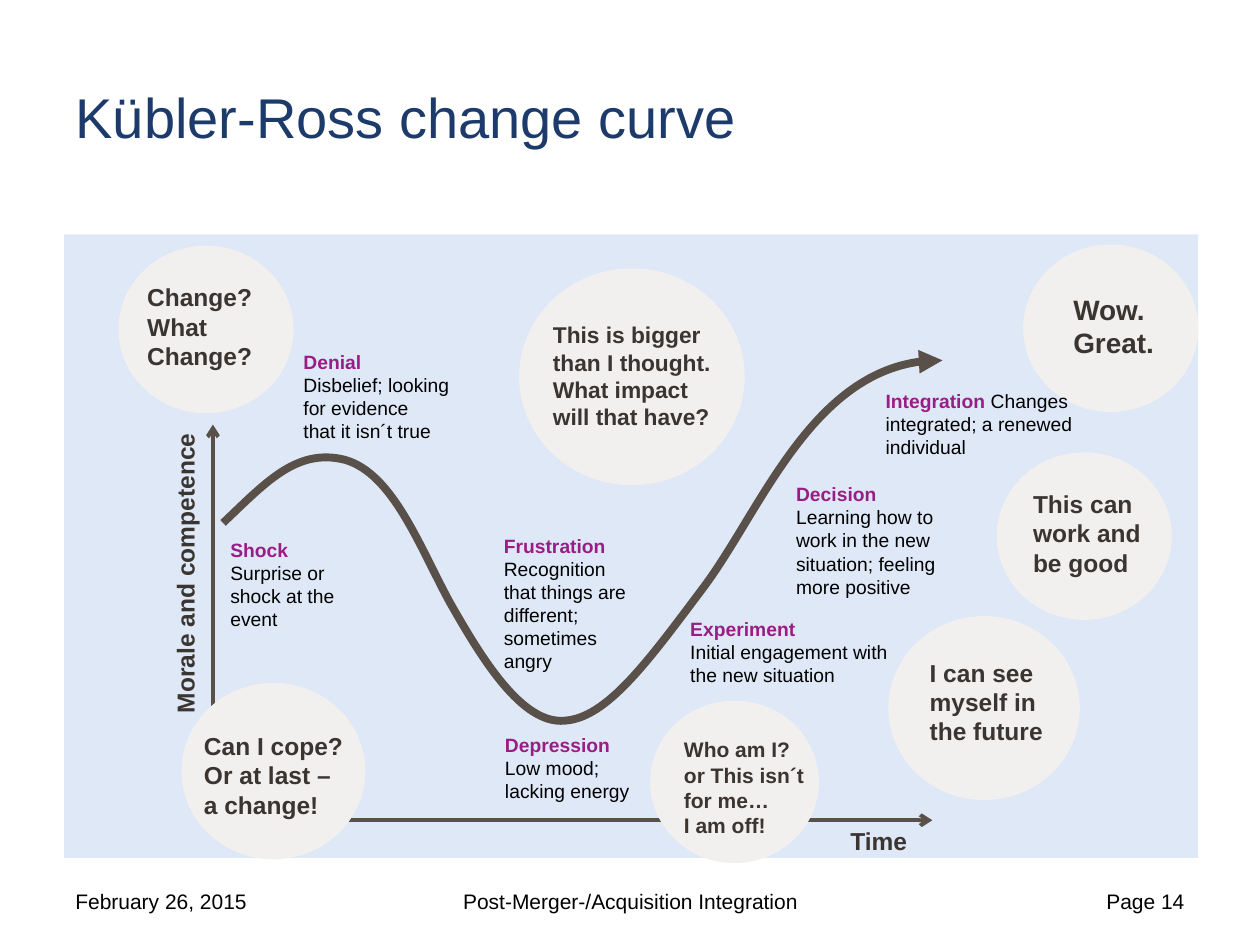
from lxml import etree
from pptx import Presentation
from pptx.dml.color import RGBColor
from pptx.enum.shapes import MSO_CONNECTOR, MSO_SHAPE
from pptx.enum.text import MSO_ANCHOR, MSO_AUTO_SIZE, PP_ALIGN
from pptx.oxml.ns import qn
from pptx.util import Pt

PX = 9144  # 100 px to the inch
STRAIGHT = MSO_CONNECTOR.STRAIGHT
RECTANGLE, OVAL = MSO_SHAPE.RECTANGLE, MSO_SHAPE.OVAL
MIDDLE = MSO_ANCHOR.MIDDLE
GROW = MSO_AUTO_SIZE.SHAPE_TO_FIT_TEXT
LEFT, CENTER, RIGHT = PP_ALIGN.LEFT, PP_ALIGN.CENTER, PP_ALIGN.RIGHT

FONT = "Arial"
NAVY, PURPLE, BLACK = "1C3B6B", "991D85", "000000"
PANEL, BUBBLE, BROWN, DARK = "DEE8F6", "F1F0EF", "59504A", "3B3531"

# Circle, text box offset within the circle and size, font size, thought
BUBBLES = [
    ((43, 9, 139, 133), (13, 24, 124, 81), 14, "Change? What Change?"),
    ((361, 27, 179, 172), (17, 37, 158, 98), 13,
     "This is bigger than I thought. What impact will that have?"),
    ((761, 8, 139, 133), (30, 33, 115, 64), 16, "Wow. Great."),
    ((740, 173, 139, 133), (19, 24, 158, 81), 14, "This can\nwork and\vbe good"),
    ((654, 303, 152, 146), (23, 28, 153, 81), 14, "I can see myself in\nthe future"),
    ((465, 370, 134, 129), (17, 24, 125, 91), 12,
     "Who am I? or This isn´t for me…\nI am off!"),
    ((93, 356, 146, 140), (8, 33, 159, 81), 14, "Can I cope?\vOr at last –\va change!"),
]
STAGES = [
    ((122, 236, 161, 84), "Shock", "Surprise or\vshock at the\vevent"),
    ((180, 87, 149, 84), "Denial", "Disbelief; looking for evidence\vthat it isn´t true"),
    ((339, 233, 138, 121), "Frustration",
     "Recognition\vthat things are different; sometimes\vangry"),
    ((340, 391, 164, 66), "Depression", "Low mood;\vlacking energy"),
    ((487, 299, 193, 66), "Experiment", "Initial engagement with the new situation"),
    ((571, 192, 144, 103), "Decision",
     "Learning how to work in the new situation; feeling more positive"),
]
INTEGRATION_BOX = (642, 118, 189, 66)
# Start point, then two control points and an end point for each section
CURVE = [
    (126, 229),
    (159, 198), (184, 169), (223, 179),
    (261, 190), (282, 248), (306, 292),
    (331, 336), (363, 389), (397, 386),
    (431, 384), (464, 338), (509, 278),
    (553, 218), (598, 98), (697, 100),
]


def rgb(code):
    return RGBColor.from_string(code)


def emu(lengths):
    return [length * PX for length in lengths]


def within(origin, box):
    """Move a box by the left and top of the region it lies in."""
    return (origin[0] + box[0], origin[1] + box[1], *box[2:])


def style(run, size, color, bold=False):
    run.font.name = FONT
    run.font.size = Pt(size)
    run.font.bold = bold
    run.font.color.rgb = rgb(color)


def style_frame(frame, size, color, bold=False, align=LEFT):
    for paragraph in frame.paragraphs:
        paragraph.alignment = align
        for run in paragraph.runs:
            style(run, size, color, bold)


def add_text(slide, box, text, size, color, bold=False):
    holder = slide.shapes.add_textbox(*emu(box))
    frame = holder.text_frame
    frame.word_wrap = True
    frame.auto_size = GROW
    frame.text = text
    style_frame(frame, size, color, bold)
    return holder


def add_filled(slide, kind, box, color):
    shape = slide.shapes.add_shape(kind, *emu(box))
    shape.shadow.inherit = False
    shape.fill.solid()
    shape.fill.fore_color.rgb = rgb(color)
    shape.line.fill.background()


def style_arrow(shape, width, head):
    shape.line.color.rgb = rgb(BROWN)
    shape.line.width = Pt(width)
    etree.SubElement(shape.line._get_or_add_ln(), qn("a:tailEnd"), type=head)


def add_axes(slide, origin):
    corner = within(origin, (118, 465))
    for tip in ((118, 151), (689, 465)):
        ends = emu(corner + within(origin, tip))
        axis = slide.shapes.add_connector(STRAIGHT, *ends)
        style_arrow(axis, 2.25, "arrow")
        etree.SubElement(axis._element.spPr, qn("a:effectLst"))
    add_text(slide, within(origin, (614, 465, 115, 34)), "Time", 14, DARK, True)
    morale = add_text(slide, within(origin, (-48, 229, 288, 34)),
                      "Morale and competence", 14, DARK, True)
    morale.rotation = 270


def add_bubble(slide, circle, text_box, size, thought):
    add_filled(slide, OVAL, circle, BUBBLE)
    add_text(slide, within(circle, text_box), thought, size, DARK, True)


def add_stage(slide, box, name, detail):
    label = add_text(slide, box, f"{name}\n{detail}", 11, BLACK)
    style(label.text_frame.paragraphs[0].runs[0], 11, PURPLE, True)


def add_integration(slide, box):
    """The last stage, whose name and detail share one paragraph."""
    label = add_text(slide, box, "Integration ", 11, PURPLE, True)
    detail = label.text_frame.paragraphs[0].add_run()
    detail.text = "Changes integrated; a renewed individual"
    style(detail, 11, BLACK)


def add_curve(slide, origin):
    start, *points = [within(origin, point) for point in CURVE]
    builder = slide.shapes.build_freeform(*start, scale=PX)
    builder.add_line_segments(points, close=False)
    curve = builder.convert_to_shape()
    curve.shadow.inherit = False
    curve.fill.background()
    style_arrow(curve, 4.5, "triangle")

    # Every three straight segments become one Bézier section
    outline = next(curve._element.iter(qn("a:path")))
    segments = outline.findall(qn("a:lnTo"))
    for first in range(0, len(segments), 3):
        section = etree.SubElement(outline, qn("a:cubicBezTo"))
        for segment in segments[first:first + 3]:
            section.append(segment[0])
            outline.remove(segment)


def add_change_chart(slide, box):
    add_filled(slide, RECTANGLE, box, PANEL)
    add_axes(slide, box)
    for circle, text_box, size, thought in BUBBLES:
        add_bubble(slide, within(box, circle), text_box, size, thought)
    for stage_box, name, detail in STAGES:
        add_stage(slide, within(box, stage_box), name, detail)
    add_integration(slide, within(box, INTEGRATION_BOX))
    add_curve(slide, box)


def add_title(slide, box):
    title = slide.shapes.title
    title.left, title.top, title.width, title.height = emu(box)
    frame = title.text_frame
    frame.text = "Kübler-Ross change curve"
    frame.vertical_anchor = MIDDLE
    style_frame(frame, 32, NAVY)


def add_footer(slide, box):
    left, top, width, height = box
    parts = [
        (0, 233, "February 26, 2015", LEFT),
        (292, 317, "Post-Merger-/Acquisition Integration", CENTER),
        (width - 233, 233, "Page 14", RIGHT),
    ]
    for offset, part_width, text, align in parts:
        part = add_text(slide, (left + offset, top, part_width, height), text, 12, BLACK)
        part.text_frame.auto_size = MSO_AUTO_SIZE.NONE
        part.text_frame.vertical_anchor = MIDDLE
        part.text_frame.paragraphs[0].alignment = align


def main():
    deck = Presentation()
    deck.slide_width, deck.slide_height = emu((1000, 750))
    slide = deck.slides.add_slide(deck.slide_layouts.get_by_name("Title Only"))
    add_title(slide, (50, 30, 900, 125))
    add_change_chart(slide, (51, 186, 900, 495))
    add_footer(slide, (50, 695, 900, 40))
    deck.save("out.pptx")


if __name__ == "__main__":
    main()
